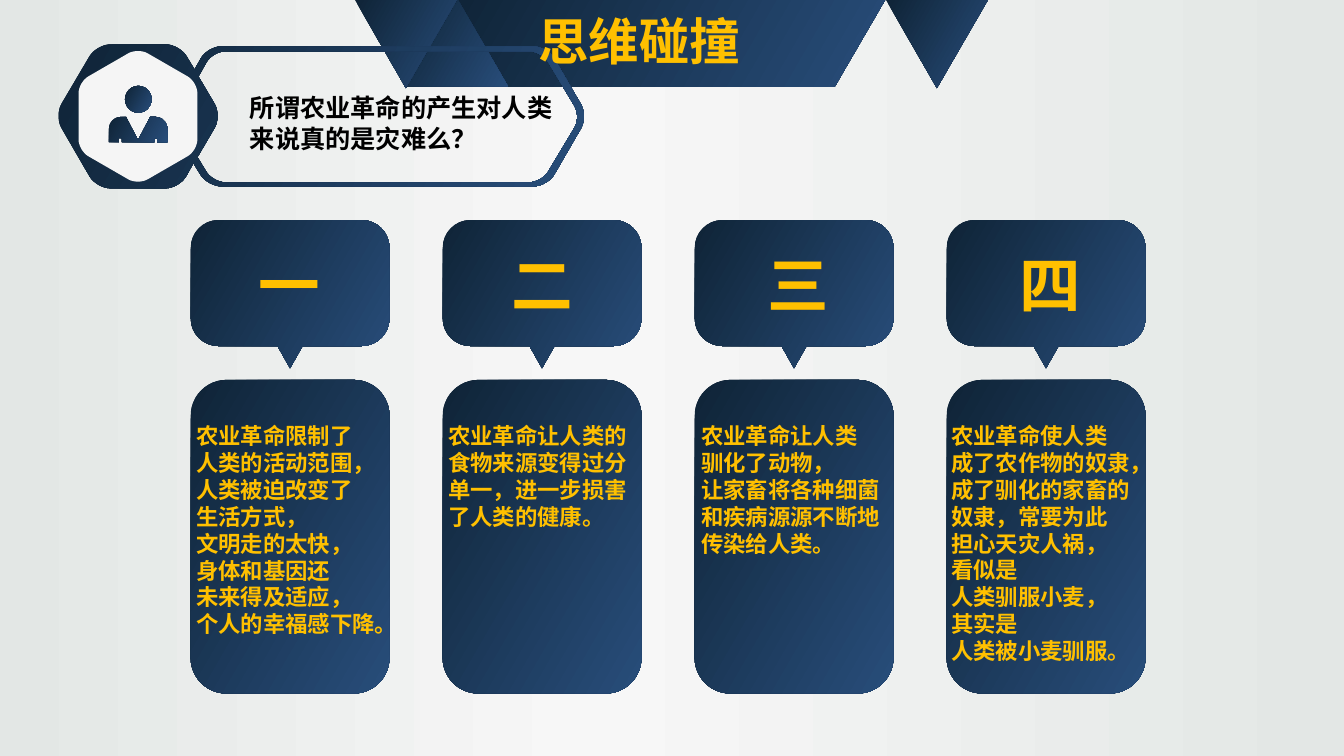
from copy import deepcopy
from dataclasses import dataclass
from math import cos, dist, pi, sin

from lxml import etree
from pptx import Presentation
from pptx.dml import color
from pptx.enum import shapes, text
from pptx.oxml import ns
from pptx.util import Pt


@dataclass(frozen=True)
class Theme:
    font: str = "Noto Sans CJK SC"
    navy: tuple = ((0, "0F2437"), (100, "284D7A"))
    backdrop: tuple = ((1, "E3E7E5"), (56, "F7F7F7"), (100, "E3E7E5"))
    navy_angle: int = 330
    backdrop_angle: int = 180
    paper: str = "F5F5F5"
    gold: str = "FFC000"
    ink: str = "000000"
    title_size: int = 36
    question_size: int = 18
    numeral_size: int = 44
    answer_size: int = 16


THEME = Theme()
COLUMN_LEFT, COLUMN_STEP, COLUMN_WIDTH = 136.2, 180, 142
CARD_TOP, CARD_HEIGHT = 271.4, 224
QUESTION = ["所谓农业革命的产生对人类", "来说真的是灾难么？"]
ANSWERS = [
    ("一", 145.4, 133.2, ["农业革命限制了", "人类的活动范围，", "人类被迫改变了", "生活方式，",
                         "文明走的太快，", "身体和基因还", "未来得及适应，", "个人的幸福感下降。"]),
    ("二", 326.2, 313.2, ["农业革命让人类的", "食物来源变得过分", "单一，进一步损害", "了人类的健康。"]),
    ("三", 509, 493.9, ["农业革命让人类", "驯化了动物，", "让家畜将各种细菌",
                       "和疾病源源不断地", "传染给人类。"]),
    ("四", 689, 672.5, ["农业革命使人类", "成了农作物的奴隶，", "成了驯化的家畜的", "奴隶，常要为此",
                       "担心天灾人祸，", "看似是", "人类驯服小麦，", "其实是", "人类被小麦驯服。"]),
]
BADGE_OUTLINE = [
    (69, 31.7, 10), (128.2, 31.7, 10), (139, 49.7, 0), (148.3, 33.1, 10),
    (391, 33.1, 10), (420, 83.2, 10), (391, 133.2, 10), (148.3, 133.2, 10),
    (138.2, 116.6, 0), (128.2, 134.6, 10), (69, 134.6, 10), (38.9, 82.8, 10),
]
BADGE_WINDOW = [
    (152, 36.7, 9), (387, 36.7, 9), (415, 83.5, 9), (387, 130.3, 9),
    (152, 130.3, 9), (141.1, 112.3, 0), (158.4, 82.8, 10), (141.8, 54.7, 0),
]
TORSO = [
    (77.8, 101.5, 0), (77.8, 83.5, 8.6), (90, 83.5, 0), (98.6, 100.1, 0),
    (107.3, 83.5, 0), (119.5, 83.5, 8.6), (119.5, 101.5, 0), (112.3, 101.5, 0),
    (112.3, 98.6, 0), (110.2, 98.6, 0), (110.2, 101.5, 0), (87.1, 101.5, 0),
    (87.1, 98.6, 0), (85, 98.6, 0), (85, 101.5, 0),
]


def apply(target, formats):
    for name, value in formats.items():
        setattr(target, name, value)


def paint_gradient(fill, owner, stops, angle):
    fill.gradient()
    fill.gradient_angle = angle
    stop_list = owner.xpath(".//a:gsLst")[0]
    sample = deepcopy(stop_list[0])
    for old in list(stop_list):
        stop_list.remove(old)
    for _ in stops:
        stop_list.append(deepcopy(sample))
    for stop, (position, shade) in zip(fill.gradient_stops, stops):
        stop.position = position / 100
        stop.color.rgb = color.RGBColor.from_string(shade)


def finish(shape, solid=None):
    shape.shadow.inherit = False
    shape.line.fill.background()
    if solid:
        shape.fill.solid()
        shape.fill.fore_color.rgb = color.RGBColor.from_string(solid)
    else:
        paint_gradient(shape.fill, shape.element, THEME.navy, THEME.navy_angle)


def add_preset(slide, kind, left, top, width, height):
    preset = slide.shapes.add_shape(kind, Pt(left), Pt(top), Pt(width), Pt(height))
    finish(preset)
    return preset


def toward(start, end, share):
    return tuple(a + (b - a) * share for a, b in zip(start, end))


def round_corners(corners, steps=8):
    points = []
    for index, (x, y, cut) in enumerate(corners):
        corner = (x, y)
        if not cut:
            points.append(corner)
            continue
        before = corners[index - 1][:2]
        after = corners[(index + 1) % len(corners)][:2]
        start = toward(corner, before, cut / dist(corner, before))
        end = toward(corner, after, cut / dist(corner, after))
        handles = (start, toward(start, corner, 0.55), toward(end, corner, 0.55), end)
        for step in range(steps + 1):
            t = step / steps
            weights = ((1 - t) ** 3, 3 * t * (1 - t) ** 2, 3 * t * t * (1 - t), t ** 3)
            points.append(tuple(sum(w * h[axis] for w, h in zip(weights, handles))
                                for axis in (0, 1)))
    return [(Pt(x), Pt(y)) for x, y in points]


def add_outline(slide, *contours, solid=None):
    first, *holes = [round_corners(contour) for contour in contours]
    builder = slide.shapes.build_freeform(*first[0], scale=1.0)
    builder.add_line_segments(first[1:], close=True)
    for hole in holes:
        builder.move_to(*hole[0])
        builder.add_line_segments(hole[1:], close=True)
    finish(builder.convert_to_shape(), solid)


def write(frame, lines, size, shade, align=text.PP_ALIGN.LEFT, wrap=False):
    apply(frame, {"word_wrap": wrap, "auto_size": text.MSO_AUTO_SIZE.NONE,
                  "vertical_anchor": text.MSO_ANCHOR.TOP})
    for index, line in enumerate(lines):
        paragraph = frame.add_paragraph() if index else frame.paragraphs[0]
        paragraph.alignment = align
        run = paragraph.add_run()
        run.text = line
        apply(run.font, {"size": Pt(size), "bold": True, "name": THEME.font})
        run.font.color.rgb = color.RGBColor.from_string(shade)
        east_asian = etree.SubElement(run._r.get_or_add_rPr(), ns.qn("a:ea"))
        east_asian.set("typeface", THEME.font)


def add_words(slide, left, top, width, height, *words, **layout):
    box = slide.shapes.add_textbox(Pt(left), Pt(top), Pt(width), Pt(height))
    write(box.text_frame, *words, **layout)


def add_banner(slide):
    add_outline(slide, [(318.2, 0, 0), (632.2, 0, 0), (596.2, 62, 0), (318.2, 62, 0)])
    kinds = shapes.MSO_SHAPE
    add_preset(slide, kinds.ISOSCELES_TRIANGLE, 290.2, -1.2, 72.7, 62.9)
    for left in (253.6, 632.9):
        add_preset(slide, kinds.FLOWCHART_MERGE, left, 0, 72.7, 62.9)


def add_question(slide):
    add_outline(slide, BADGE_OUTLINE, BADGE_WINDOW)
    hexagon = [(98.6 + 49 * sin(k * pi / 3), 83.1 - 49 * cos(k * pi / 3), 8) for k in range(6)]
    add_outline(slide, hexagon, solid=THEME.paper)
    add_preset(slide, shapes.MSO_SHAPE.OVAL, 89.3, 61.3, 19, 19.2)
    add_outline(slide, TORSO)
    add_words(slide, 171.4, 62.6, 230.4, 94.3, QUESTION, THEME.question_size, THEME.ink)


def add_answer(slide, left, numeral, numeral_left, lines_left, lines):
    top, bottom, tip = 157.2, 247.2, 263
    right, middle = left + COLUMN_WIDTH, left + COLUMN_WIDTH / 2
    add_outline(slide, [(left, top, 19.8), (right, top, 19.8), (right, bottom, 19.8),
                        (middle + 9, bottom, 0), (middle, tip, 0), (middle - 9, bottom, 0),
                        (left, bottom, 19.8)])
    card = add_preset(slide, shapes.MSO_SHAPE.ROUNDED_RECTANGLE,
                      left, CARD_TOP, COLUMN_WIDTH, CARD_HEIGHT)
    card.adjustments[0] = 0.18
    add_words(slide, numeral_left, 172.8, 122.4, 60.5, [numeral], THEME.numeral_size,
              THEME.gold, align=text.PP_ALIGN.CENTER, wrap=True)
    size = THEME.answer_size
    width = max(map(len, lines)) * size + 14.4
    add_words(slide, lines_left, 298.1, width, len(lines) * 19.2 + 8, lines, size, THEME.gold)


def set_title(slide, wording):
    title = slide.shapes.title
    apply(title, {"left": Pt(372.2), "top": Pt(3.6), "width": Pt(168.5), "height": Pt(51)})
    write(title.text_frame, [wording], THEME.title_size, THEME.gold,
          align=text.PP_ALIGN.CENTER)
    title.element.getparent().append(title.element)


def main():
    deck = Presentation()
    apply(deck, {"slide_width": Pt(960), "slide_height": Pt(540)})
    slide = deck.slides.add_slide(deck.slide_layouts[5])
    paint_gradient(slide.background.fill, slide.element, THEME.backdrop, THEME.backdrop_angle)
    add_banner(slide)
    add_question(slide)
    set_title(slide, "思维碰撞")
    for index, answer in enumerate(ANSWERS):
        add_answer(slide, COLUMN_LEFT + index * COLUMN_STEP, *answer)
    deck.save("out.pptx")


if __name__ == "__main__":
    main()
